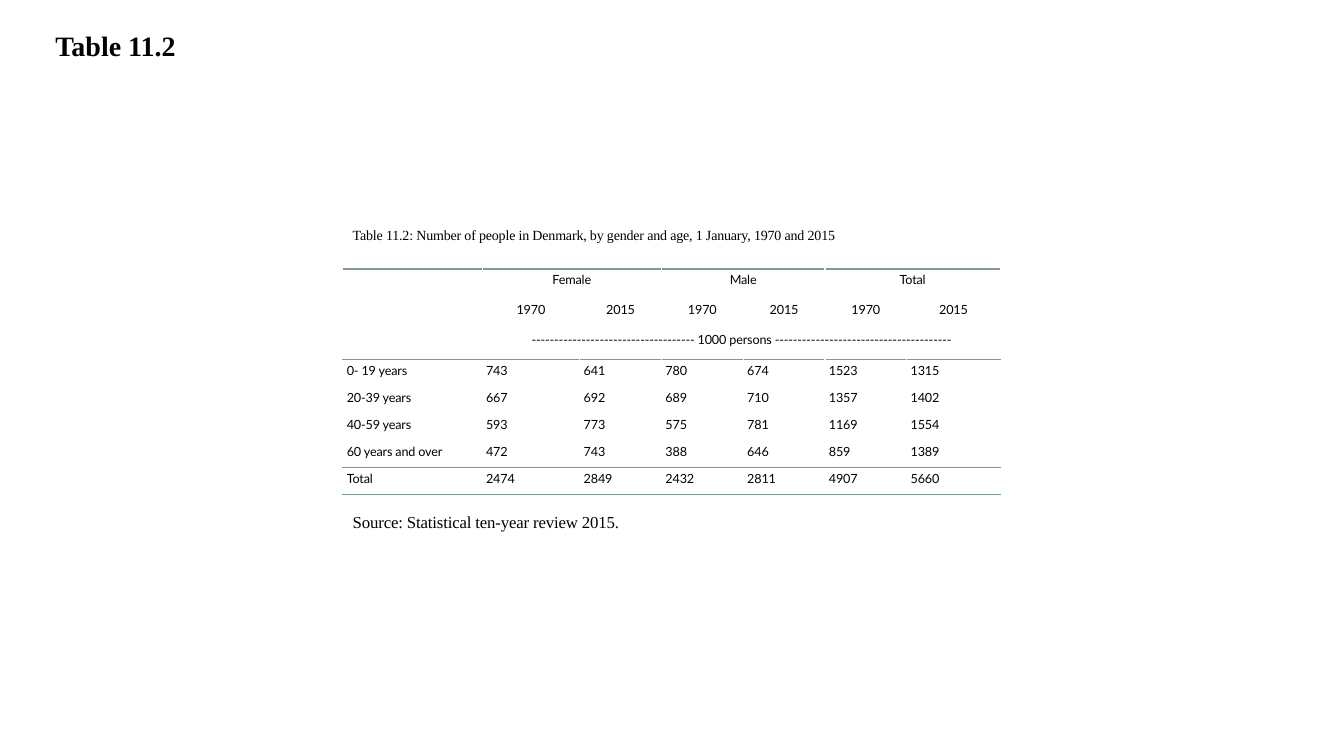
"""Build the slide with Table 11.2, people in Denmark by gender and age."""
import lxml.etree
import pptx
import pptx.dml.color
import pptx.enum.text
import pptx.oxml.ns
import pptx.util

Cm, Pt = pptx.util.Cm, pptx.util.Pt
align = pptx.enum.text.PP_ALIGN
anchor = pptx.enum.text.MSO_ANCHOR
qn = pptx.oxml.ns.qn


def tint(color, value):
    color.rgb = pptx.dml.color.RGBColor.from_string(value)


def write(frame, text, fonts, paras, track):
    para = frame.paragraphs[0]
    for key, value in paras.items():
        setattr(para, key, value)
    if text:
        run = para.add_run()
        run.text = text
        for key, value in fonts.items():
            setattr(run.font, key, value)
        tint(run.font.color, "000000")
        run._r.get_or_add_rPr().set("spc", str(track))


deck = pptx.Presentation()
deck.slide_width, deck.slide_height = Cm(33.87), Cm(19.05)
slide = deck.slides.add_slide(deck.slide_layouts[5])
serif = "Times New Roman"

title = slide.shapes.title
place = {"left": Cm(1.14), "top": Cm(0.69), "width": Cm(5.03), "height": Cm(2.46)}
for key, value in place.items():
    setattr(title, key, value)
title.text_frame.vertical_anchor = anchor.TOP
title.text_frame.word_wrap = True
write(title.text_frame, "Table 11.2",
      {"name": serif, "size": Pt(20), "bold": True},
      {"alignment": align.LEFT, "line_spacing": 0.9}, 0)

notes = [
    (5.61, 0.66, 10,
     "Table 11.2: Number of people in Denmark, by gender and age, 1 January, 1970 and 2015",
     {"alignment": align.JUSTIFY, "line_spacing": Pt(11), "space_after": Pt(6)}),
    (12.78, 0.76, 12, "Source: Statistical ten-year review 2015.",
     {"space_before": Pt(4), "space_after": Pt(14.5)}),
]
for top, height, size, text, paras in notes:
    box = slide.shapes.add_textbox(Cm(8.64), Cm(top), Cm(16.92), Cm(height))
    box.text_frame.word_wrap = True
    write(box.text_frame, text, {"name": serif, "size": Pt(size)}, paras, -10)

rows = [
    ["", "Female", "", "Male", "", "Total", ""],
    ["", "1970", "2015", "1970", "2015", "1970", "2015"],
    ["", "------------------------------------ 1000 persons "
     "---------------------------------------", "", "", "", "", ""],
    ["0- 19 years", "743", "641", "780", "674", "1523", "1315"],
    ["20-39 years", "667", "692", "689", "710", "1357", "1402"],
    ["40-59 years", "593", "773", "575", "781", "1169", "1554"],
    ["60 years and over", "472", "743", "388", "646", "859", "1389"],
    ["Total", "2474", "2849", "2432", "2811", "4907", "5660"],
]
widths = [3.51, 2.46, 2.06, 2.06, 2.06, 2.06, 2.36]
rules = {0: ["lnT"], 2: ["lnB"], 3: ["lnT"], 6: ["lnB"], 7: ["lnT", "lnB"]}
inset = {"margin_left": Cm(0.1), "margin_right": Cm(0.1),
         "margin_top": 0, "margin_bottom": 0, "vertical_anchor": anchor.TOP}

grid = slide.shapes.add_table(len(rows), len(widths), Cm(8.64), Cm(6.78),
                              Cm(sum(widths)), Cm(0.68 * len(rows))).table
grid.first_row = grid.horz_banding = False
for col, width in zip(grid.columns, widths):
    col.width = Cm(width)

for r, row in enumerate(rows):
    grid.rows[r].height = Cm(0.68)
    side = align.CENTER if r < 3 else align.JUSTIFY
    for c, text in enumerate(row):
        cell = grid.cell(r, c)
        for key, value in inset.items():
            setattr(cell, key, value)
        write(cell.text_frame, text, {"name": "Lato", "size": Pt(9)},
              {"alignment": side, "line_spacing": Pt(12.8)}, -10)
        props = cell._tc.get_or_add_tcPr()
        for edge in rules.get(r, []):
            line = lxml.etree.SubElement(props, qn("a:" + edge), w=str(Pt(1)))
            fill = lxml.etree.SubElement(line, qn("a:solidFill"))
            lxml.etree.SubElement(fill, qn("a:srgbClr"), val="7F9C90")
        cell.fill.background()

for r, first, last in [(0, 1, 2), (0, 3, 4), (0, 5, 6), (2, 1, 6)]:
    grid.cell(r, first).merge(grid.cell(r, last))

deck.save("out.pptx")
